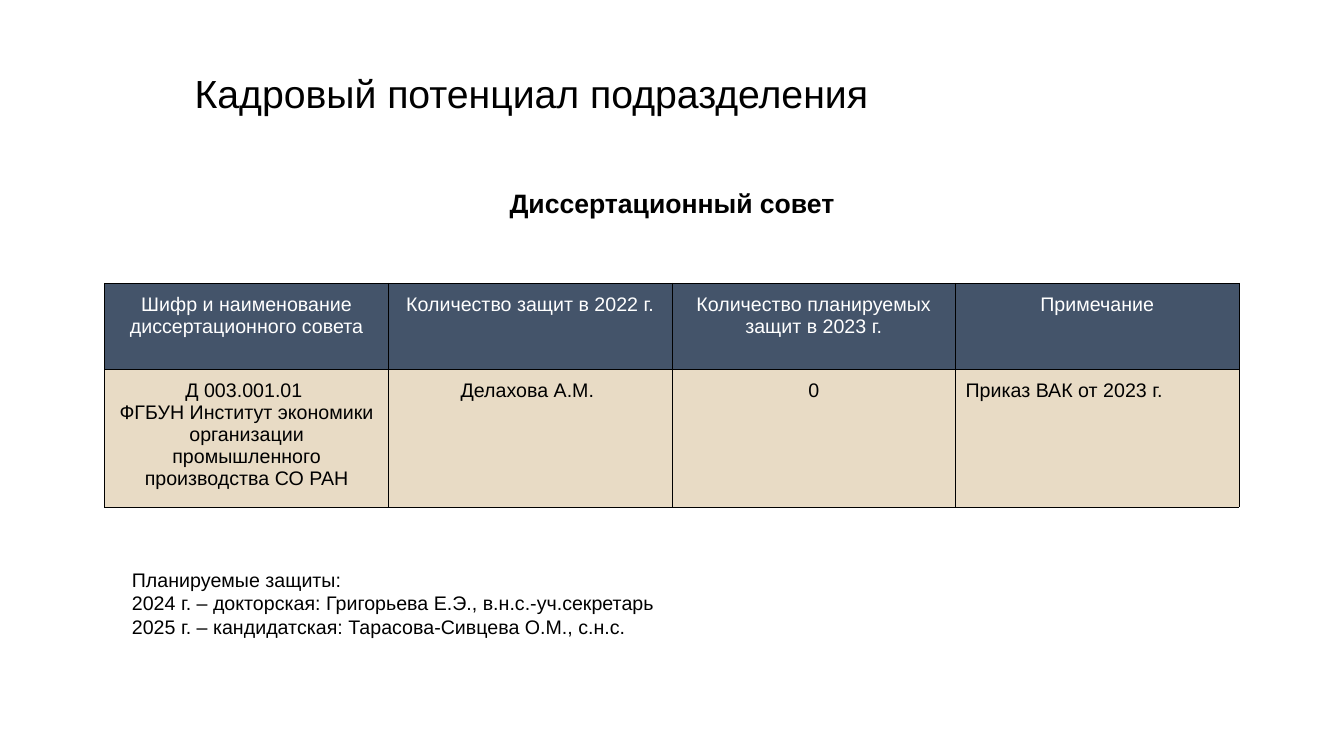
from lxml import etree
from pptx import Presentation
from pptx.enum import text
from pptx.oxml import ns
from pptx.util import Inches, Pt
from pptx.dml.color import RGBColor

# Content
TITLE = "Кадровый потенциал подразделения"
SUBTITLE = "Диссертационный совет"
COUNCIL_ROWS = [
    ["Шифр и наименование диссертационного совета", "Количество защит в 2022 г.",
     "Количество планируемых защит в 2023 г.", "Примечание"],
    ["Д 003.001.01 \nФГБУН Институт экономики организации промышленного производства СО РАН",
     "Делахова А.М. ", "0", "Приказ ВАК от 2023 г."],
]
PLANNED_DEFENCES = """Планируемые защиты:
2024 г. – докторская: Григорьева Е.Э., в.н.с.-уч.секретарь
2025 г. – кандидатская: Тарасова-Сивцева О.М., с.н.с."""

COLORS = {"ink": "000000", "header_text": "FFFFFF", "header": "44546A", "body": "E8DBC5"}
FONT = "Arial"
LEFT, CENTER = text.PP_ALIGN.LEFT, text.PP_ALIGN.CENTER
ROW_HEIGHTS = [0.86, 1.36]
TABLE_LEFT, TABLE_TOP, TABLE_WIDTH = 1.04, 2.81, 11.25
BORDER_WIDTH = Pt(0.75)


def write(frame, content, size=14, color="ink", bold=False, align=LEFT):
    """Fill a text frame, one paragraph per line."""
    for index, line in enumerate(content.split("\n")):
        para = frame.paragraphs[0] if index == 0 else frame.add_paragraph()
        para.alignment = align
        span = para.add_run()
        span.text = line
        span.font.name, span.font.size, span.font.bold = FONT, Pt(size), bold
        span.font.color.rgb = RGBColor.from_string(COLORS[color])


def set_frame(frame, vertical_inset=0.05, wrap=True):
    frame.word_wrap = wrap
    frame.auto_size = text.MSO_AUTO_SIZE.NONE
    frame.vertical_anchor = text.MSO_ANCHOR.TOP
    frame.margin_left = frame.margin_right = Inches(0.1)
    frame.margin_top = frame.margin_bottom = Inches(vertical_inset)


def add_text(page, place, content, vertical_inset=0.05, wrap=True, **style):
    box = page.shapes.add_textbox(*map(Inches, place))
    set_frame(box.text_frame, vertical_inset, wrap)
    write(box.text_frame, content, **style)


def add_borders(cell):
    """Draw all four cell edges; edge elements come before the fill."""
    properties = cell._tc.get_or_add_tcPr()
    for position, edge in enumerate(("lnL", "lnR", "lnT", "lnB")):
        line = etree.Element(ns.qn("a:" + edge), w=str(BORDER_WIDTH))
        fill = etree.SubElement(line, ns.qn("a:solidFill"))
        etree.SubElement(fill, ns.qn("a:srgbClr"), val=COLORS["ink"])
        properties.insert(position, line)


def add_council_table(page):
    columns = len(COUNCIL_ROWS[0])
    table = page.shapes.add_table(
        len(COUNCIL_ROWS), columns, Inches(TABLE_LEFT), Inches(TABLE_TOP),
        Inches(TABLE_WIDTH), Inches(sum(ROW_HEIGHTS))).table
    table.horz_banding = False
    for column in table.columns:
        column.width = Inches(TABLE_WIDTH / columns)
    for row_index, row in enumerate(COUNCIL_ROWS):
        table.rows[row_index].height = Inches(ROW_HEIGHTS[row_index])
        is_header = row_index == 0
        for column_index, content in enumerate(row):
            cell = table.cell(row_index, column_index)
            cell.margin_left = cell.margin_right = Inches(0.1)
            cell.margin_top = cell.margin_bottom = Inches(0.1)
            cell.fill.solid()
            cell.fill.fore_color.rgb = RGBColor.from_string(
                COLORS["header" if is_header else "body"])
            is_note = not is_header and column_index == columns - 1
            write(cell.text_frame, content, color="header_text" if is_header else "ink",
                  align=LEFT if is_note else CENTER)
            add_borders(cell)


def main():
    deck = Presentation()
    deck.slide_width, deck.slide_height = Inches(13.33), Inches(7.5)
    page = deck.slides.add_slide(deck.slide_layouts[5])

    # Title
    title = page.shapes.title
    title.left, title.top, title.width, title.height = map(Inches, (1.83, 0.64, 7.91, 0.57))
    set_frame(title.text_frame)
    write(title.text_frame, TITLE, size=28)

    # Subtitle, table and planned defences
    add_text(page, (4.49, 1.75, 4.35, 0.52), SUBTITLE, vertical_inset=0.1,
             size=19, bold=True, align=CENTER)
    add_council_table(page)
    add_text(page, (1.21, 5.58, 5.55, 0.81), PLANNED_DEFENCES, wrap=False)

    deck.save("out.pptx")


if __name__ == "__main__":
    main()
